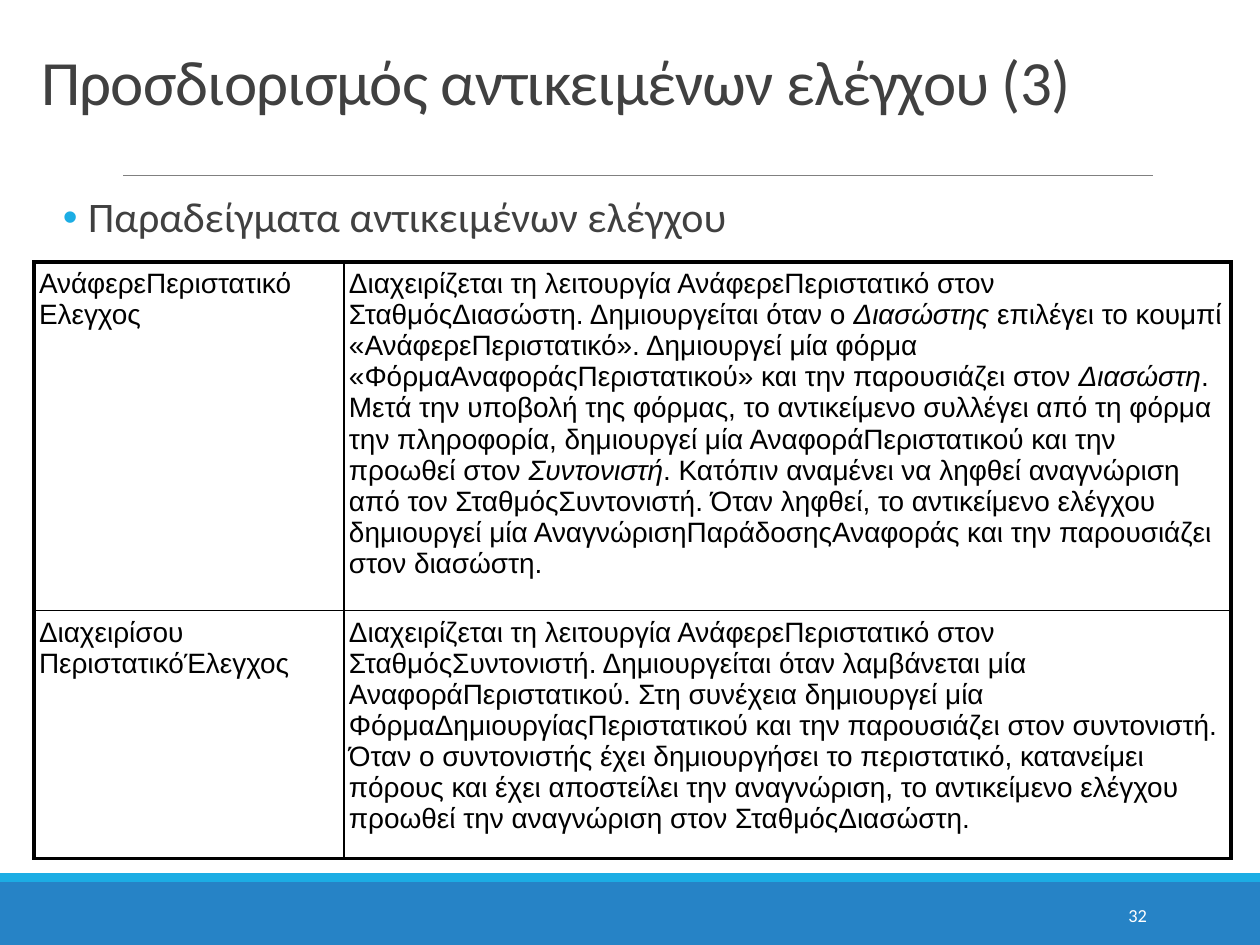
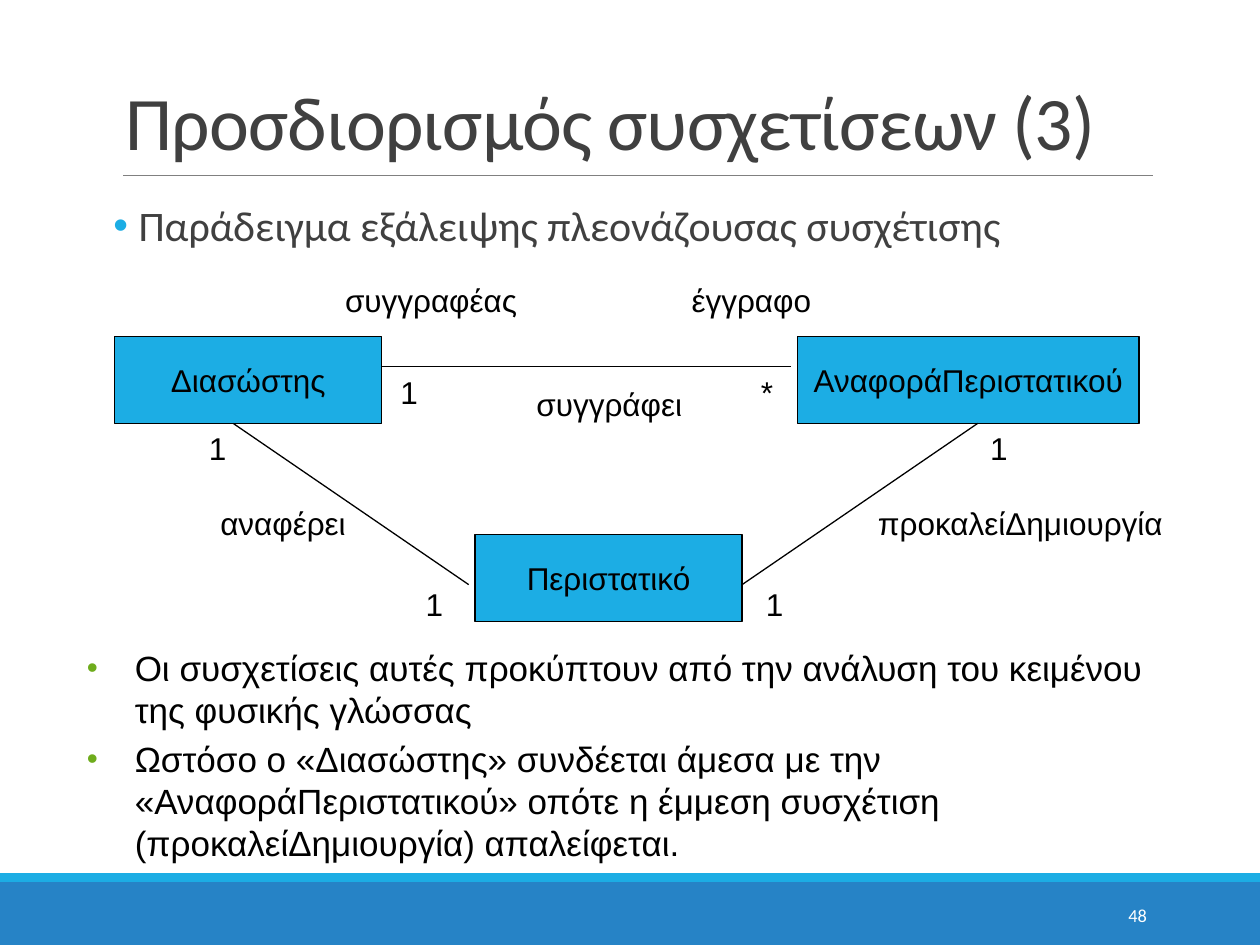
from dataclasses import dataclass

from lxml import etree
from pptx import Presentation
from pptx import util as u
from pptx.dml.color import RGBColor
from pptx.enum import shapes, text
from pptx.oxml.ns import qn


@dataclass(frozen=True)
class Theme:
    heading_font: str = "Calibri"
    content_font: str = "Arial"
    blue: str = "2683C6"
    cyan: str = "1CADE4"
    green: str = "6EAC1C"
    gray: str = "808080"
    dark: str = "404040"
    black: str = "000000"
    white: str = "FFFFFF"
    lead_size: float = 24
    points_size: float = 20
    diagram_size: float = 18
    table_size: float = 16
    number_size: float = 10.5
    thin: float = 0.75
    inner_border: float = 1
    outer_border: float = 2.25


@dataclass(frozen=True)
class Box:
    left: float
    top: float
    width: float
    height: float

    def inside(self, left, top, width, height):
        """Box given by its offset from this box."""
        return Box(self.left + left, self.top + top, width, height)

    def lengths(self):
        return [u.Inches(v) for v in (self.left, self.top, self.width, self.height)]


THEME = Theme()
ANCHOR = text.MSO_ANCHOR
ALIGN = text.PP_ALIGN


def rgb(value):
    return RGBColor.from_string(value)


def style_runs(paragraph, size, color=THEME.black, font=THEME.content_font):
    for run in paragraph.runs:
        run.font.size = u.Pt(size)
        run.font.name = font
        run.font.color.rgb = rgb(color)


def add_bullet(paragraph, color, indent, percent=100):
    props = paragraph._p.get_or_add_pPr()
    props.set("marL", str(u.Inches(indent)))
    props.set("indent", str(-u.Inches(indent)))
    bullet_color = etree.SubElement(props, qn("a:buClr"))
    etree.SubElement(bullet_color, qn("a:srgbClr"), val=color)
    etree.SubElement(props, qn("a:buSzPct"), val=str(percent * 1000))
    etree.SubElement(props, qn("a:buFont"), typeface=THEME.content_font)
    etree.SubElement(props, qn("a:buChar"), char="•")


def add_text_frame(slide, box, side_inset=0.1, anchor=ANCHOR.TOP):
    frame = slide.shapes.add_textbox(*box.lengths()).text_frame
    frame.word_wrap = True
    frame.vertical_anchor = anchor
    frame.margin_left = frame.margin_right = u.Inches(side_inset)
    return frame


def add_rectangle(slide, box, fill, line=None):
    rectangle = slide.shapes.add_shape(shapes.MSO_SHAPE.RECTANGLE, *box.lengths())
    rectangle.shadow.inherit = False
    rectangle.fill.solid()
    rectangle.fill.fore_color.rgb = rgb(fill)
    if line:
        rectangle.line.color.rgb = rgb(line)
        rectangle.line.width = u.Pt(THEME.thin)
    else:
        rectangle.line.fill.background()
    return rectangle


def add_line(slide, start, end, color=THEME.black, width=THEME.thin):
    line = slide.shapes.add_connector(
        shapes.MSO_CONNECTOR.STRAIGHT, *[u.Inches(v) for v in (*start, *end)])
    line.line.color.rgb = rgb(color)
    line.line.width = u.Pt(width)
    etree.SubElement(line._element.spPr, qn("a:effectLst"))


def add_footer(slide, box, number):
    add_rectangle(slide, box.inside(0, 0.07, box.width, box.height - 0.07), THEME.blue)
    add_rectangle(slide, box.inside(0, 0, box.width, 0.07), THEME.cyan)
    frame = add_text_frame(slide, box.inside(8.12, 0.13, 1.08, 0.4), anchor=ANCHOR.MIDDLE)
    page = frame.paragraphs[0]
    page.text = str(number)
    page.alignment = ALIGN.RIGHT
    style_runs(page, THEME.number_size, THEME.white, THEME.heading_font)


def add_title(slide, box, wording, size):
    title = add_text_frame(slide, box, anchor=ANCHOR.BOTTOM).paragraphs[0]
    title.text = wording
    title.line_spacing = 0.85
    style_runs(title, size, THEME.dark, THEME.heading_font)
    title.runs[0].font._element.set("spc", "-50")


def add_lead(slide, box, wording):
    lead = add_text_frame(slide, box, side_inset=0).paragraphs[0]
    lead.text = wording
    lead.line_spacing = 0.9
    lead.space_before, lead.space_after = u.Pt(12), u.Pt(2)
    style_runs(lead, THEME.lead_size, THEME.dark, THEME.heading_font)
    add_bullet(lead, THEME.cyan, 0.2)


def start_slide(deck, number):
    """Blank slide with the rule and footer that all slides share."""
    slide = deck.slides.add_slide(deck.slide_layouts[6])
    add_footer(slide, Box(0, 6.93, 10, 0.57), number)
    add_line(slide, (0.98, 1.39), (9.15, 1.39), THEME.gray, 0.5)
    return slide


def set_borders(cell, widths):
    """Border widths in points, in the order left, right, top, bottom."""
    props = cell._tc.get_or_add_tcPr()
    for position, (side, width) in enumerate(zip("LRTB", widths)):
        border = etree.Element(qn(f"a:ln{side}"), w=str(u.Pt(width)))
        fill = etree.SubElement(border, qn("a:solidFill"))
        etree.SubElement(fill, qn("a:srgbClr"), val=THEME.black)
        props.insert(position, border)


def fill_cell(cell, parts):
    """Write the parts as runs; every second part is in italics."""
    cell.margin_left = cell.margin_right = u.Inches(0.04)
    cell.margin_top = cell.margin_bottom = u.Inches(0.05)
    cell.fill.background()
    paragraph = cell.text_frame.paragraphs[0]
    if len(parts) == 1:
        paragraph.text = parts[0]
    else:
        for index, part in enumerate(parts):
            run = paragraph.add_run()
            run.text = part
            run.font.italic = index % 2 == 1
    style_runs(paragraph, THEME.table_size)


def add_control_table(slide, box, column_widths, row_heights, rows):
    table = slide.shapes.add_table(len(rows), len(column_widths), *box.lengths()).table
    table.first_row = table.horz_banding = False
    for column, width in zip(table.columns, column_widths):
        column.width = u.Inches(width)
    for row, height in zip(table.rows, row_heights):
        row.height = u.Inches(height)
    last_row, last_column = len(rows) - 1, len(column_widths) - 1
    for r, row in enumerate(rows):
        for c, parts in enumerate(row):
            cell = table.cell(r, c)
            fill_cell(cell, parts)
            edges = (c == 0, c == last_column, r == 0, r == last_row)
            set_borders(cell, [THEME.outer_border if edge else THEME.inner_border
                               for edge in edges])


def add_association_diagram(slide, box):
    classes = [
        ("Διασώστης", 0, 0.49, 2.12),
        ("Περιστατικό", 2.86, 2.06, 2.12),
        ("ΑναφοράΠεριστατικού", 5.42, 0.49, 2.71),
    ]
    associations = [
        ((0.94, 1.18), (2.81, 2.46)),
        ((6.85, 1.18), (4.98, 2.46)),
        ((2.12, 0.73), (5.37, 0.73)),
    ]
    labels = [
        ("αναφέρει", 0.74, 1.77, 1.2),
        ("προκαλείΔημιουργία", 5.96, 1.77, 2.46),
        ("συγγράφει", 3.25, 0.83, 1.36),
        ("συγγραφέας", 1.73, 0, 1.57),
        ("έγγραφο", 4.48, 0, 1.15),
        ("1", 0.65, 1.18, 0.34),
        ("1", 2.37, 2.41, 0.34),
        ("1", 5.07, 2.41, 0.34),
        ("1", 6.85, 1.18, 0.34),
        ("1", 2.17, 0.73, 0.34),
        ("*", 5.03, 0.73, 0.3),
    ]
    for name, left, top, width in classes:
        rectangle = add_rectangle(slide, box.inside(left, top, width, 0.69),
                                  THEME.cyan, THEME.black)
        frame = rectangle.text_frame
        frame.text = name
        frame.word_wrap = False
        frame.vertical_anchor = ANCHOR.MIDDLE
        frame.paragraphs[0].alignment = ALIGN.CENTER
        style_runs(frame.paragraphs[0], THEME.diagram_size)
    for ends in associations:
        add_line(slide, *[(box.left + x, box.top + y) for x, y in ends])
    for wording, left, top, width in labels:
        frame = add_text_frame(slide, box.inside(left, top, width, 0.4))
        frame.text = wording
        frame.word_wrap = False
        frame.auto_size = text.MSO_AUTO_SIZE.SHAPE_TO_FIT_TEXT
        style_runs(frame.paragraphs[0], THEME.diagram_size)


def add_points(slide, box, points):
    frame = add_text_frame(slide, box, side_inset=0.02)
    frame.text = "\n".join(points)
    for paragraph in frame.paragraphs:
        paragraph.space_before = u.Pt(THEME.points_size * 0.2)
        style_runs(paragraph, THEME.points_size)
        add_bullet(paragraph, THEME.green, 0.38, 90)


def build_control_objects(deck):
    slide = start_slide(deck, 32)
    add_title(slide, Box(0.23, 0.3, 9.55, 0.69), "Προσδιορισμός αντικειμένων ελέγχου (3)", 36)
    add_lead(slide, Box(0.5, 1.51, 9, 0.44), "Παραδείγματα αντικειμένων ελέγχου")
    report_control = [
        "Διαχειρίζεται τη λειτουργία ΑνάφερεΠεριστατικό στον ΣταθμόςΔιασώστη. "
        "Δημιουργείται όταν ο ",
        "Διασώστης",
        " επιλέγει το κουμπί «ΑνάφερεΠεριστατικό». Δημιουργεί μία φόρμα "
        "«ΦόρμαΑναφοράςΠεριστατικού» και την παρουσιάζει στον ",
        "Διασώστη",
        ". Μετά την υποβολή της φόρμας, το αντικείμενο συλλέγει από τη φόρμα την "
        "πληροφορία, δημιουργεί μία ΑναφοράΠεριστατικού και την προωθεί στον ",
        "Συντονιστή",
        ". Κατόπιν αναμένει να ληφθεί αναγνώριση από τον ΣταθμόςΣυντονιστή. Όταν "
        "ληφθεί, το αντικείμενο ελέγχου δημιουργεί μία ΑναγνώρισηΠαράδοσηςΑναφοράς "
        "και την παρουσιάζει στον διασώστη.",
    ]
    manage_control = [
        "Διαχειρίζεται τη λειτουργία ΑνάφερεΠεριστατικό στον ΣταθμόςΣυντονιστή. "
        "Δημιουργείται όταν λαμβάνεται μία ΑναφοράΠεριστατικού. Στη συνέχεια "
        "δημιουργεί μία ΦόρμαΔημιουργίαςΠεριστατικού και την παρουσιάζει στον "
        "συντονιστή. Όταν ο συντονιστής έχει δημιουργήσει το περιστατικό, κατανείμει "
        "πόρους και έχει αποστείλει την αναγνώριση, το αντικείμενο ελέγχου προωθεί "
        "την αναγνώριση στον ΣταθμόςΔιασώστη.",
    ]
    add_control_table(slide, Box(0.27, 2.08, 9.5, 4.41), [2.46, 7.04], [2.57, 1.84], [
        (["ΑνάφερεΠεριστατικό\nΕλεγχος"], report_control),
        (["Διαχειρίσου\nΠεριστατικόΈλεγχος"], manage_control),
    ])


def build_associations(deck):
    slide = start_slide(deck, 48)
    add_title(slide, Box(0.9, 0.11, 8.25, 1.26), "Προσδιορισμός συσχετίσεων (3)", 43.2)
    add_lead(slide, Box(0.9, 1.58, 8.25, 5.27), "Παράδειγμα εξάλειψης πλεονάζουσας συσχέτισης")
    add_association_diagram(slide, Box(0.91, 2.18, 8.42, 2.81))
    add_points(slide, Box(0.67, 5.08, 8.66, 1.77), [
        "Οι συσχετίσεις αυτές προκύπτουν από την ανάλυση του κειμένου της φυσικής γλώσσας",
        "Ωστόσο ο «Διασώστης» συνδέεται άμεσα με την «ΑναφοράΠεριστατικού» οπότε η "
        "έμμεση συσχέτιση (προκαλείΔημιουργία) απαλείφεται.",
    ])


def main():
    deck = Presentation()
    deck.slide_width, deck.slide_height = u.Inches(10), u.Inches(7.5)
    build_control_objects(deck)
    build_associations(deck)
    deck.save("out.pptx")


if __name__ == "__main__":
    main()
